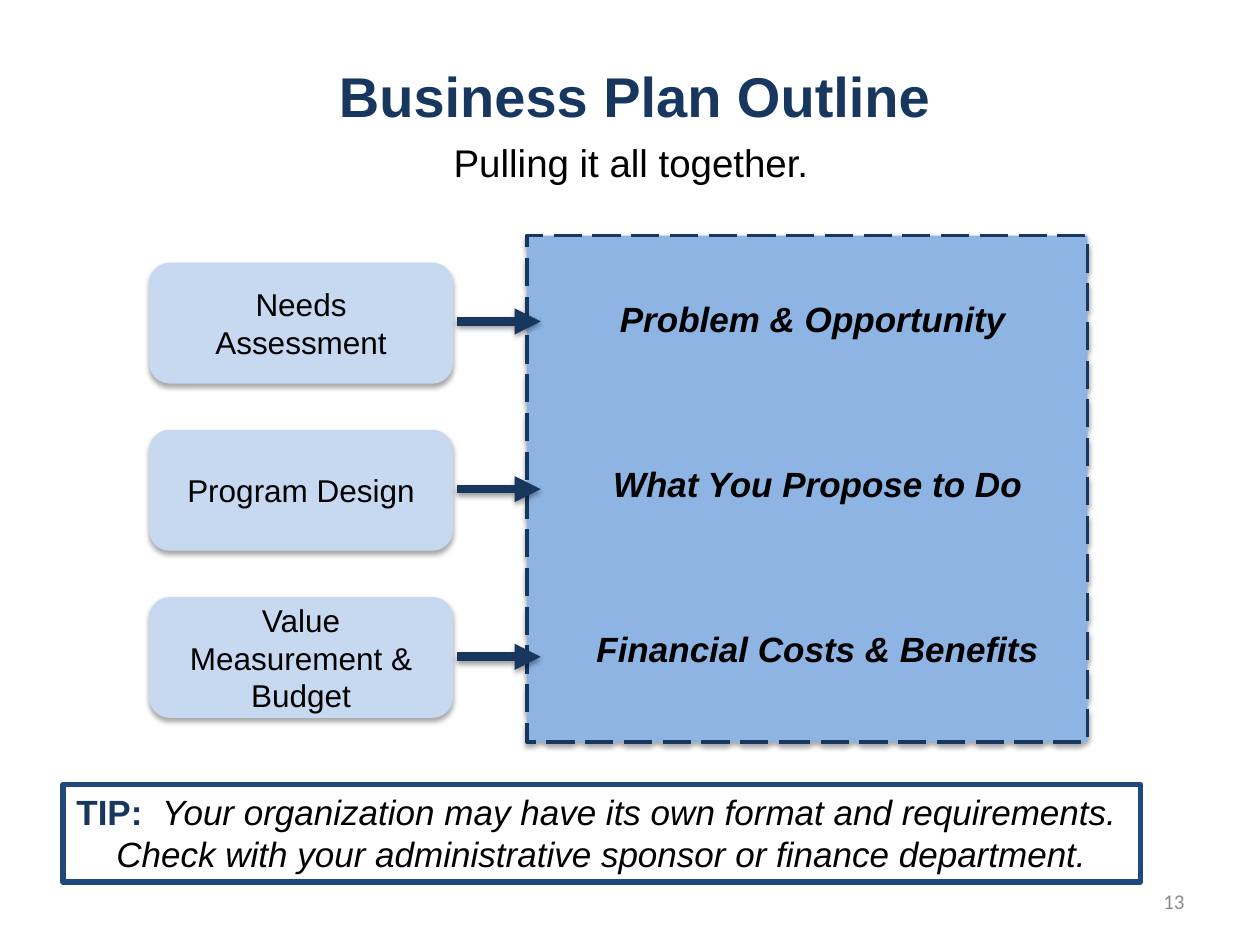
from dataclasses import dataclass

from lxml.etree import SubElement
from pptx import Presentation
from pptx.dml.color import RGBColor
from pptx.enum.dml import MSO_LINE
from pptx.enum.shapes import MSO_CONNECTOR, MSO_SHAPE
from pptx.enum.text import MSO_ANCHOR, PP_ALIGN
from pptx.oxml.ns import qn
from pptx.util import Cm, Pt


@dataclass(frozen=True)
class Theme:
    navy: str = "17375E"
    border: str = "1F497D"
    panel: str = "8EB4E3"
    box: str = "C6D9F1"
    text: str = "000000"
    muted: str = "8C8C8C"
    font: str = "Arial"
    number_font: str = "Calibri"
    title_size: int = 32
    subtitle_size: int = 22
    label_size: int = 20
    box_size: int = 18
    number_size: int = 12


class SlideBuilder:
    def __init__(self, slide, theme):
        self.slide = slide
        self.theme = theme

    def format_run(self, run, size, color=None, bold=False, italic=False, font=None):
        run.font.name = font or self.theme.font
        run.font.size = Pt(size)
        run.font.bold = bold
        run.font.italic = italic
        run.font.color.rgb = RGBColor.from_string(color or self.theme.text)

    def set_text(self, shape, text, size, align=PP_ALIGN.CENTER, anchor=MSO_ANCHOR.TOP, **style):
        frame = shape.text_frame
        frame.text = text
        frame.word_wrap = True
        frame.vertical_anchor = anchor
        paragraph = frame.paragraphs[0]
        paragraph.alignment = align
        self.format_run(paragraph.runs[0], size, **style)

    def set_line(self, shape, color, width):
        shape.line.color.rgb = RGBColor.from_string(color)
        shape.line.width = Pt(width)

    def add_shadow(self, shape, opacity, distance):
        properties = shape._element.spPr
        effects = properties.find(qn("a:effectLst"))
        if effects is None:
            effects = SubElement(properties, qn("a:effectLst"))
        shadow = SubElement(effects, qn("a:outerShdw"), blurRad=str(Pt(3.1)),
                            dist=str(Pt(distance)), dir="5400000", rotWithShape="0")
        color = SubElement(shadow, qn("a:srgbClr"), val="000000")
        SubElement(color, qn("a:alpha"), val=str(opacity * 1000))

    def title(self, text, left, top, width, height):
        shape = self.slide.shapes.title
        shape.left, shape.top, shape.width, shape.height = map(Cm, (left, top, width, height))
        self.set_text(shape, text, self.theme.title_size, anchor=MSO_ANCHOR.MIDDLE,
                      color=self.theme.navy, bold=True)

    def text_box(self, text, left, top, width, height, size, **style):
        shape = self.slide.shapes.add_textbox(Cm(left), Cm(top), Cm(width), Cm(height))
        self.set_text(shape, text, size, **style)
        return shape

    def block(self, kind, left, top, width, height, fill, line, line_width):
        shape = self.slide.shapes.add_shape(kind, Cm(left), Cm(top), Cm(width), Cm(height))
        shape.fill.solid()
        shape.fill.fore_color.rgb = RGBColor.from_string(fill)
        self.set_line(shape, line, line_width)
        shape.shadow.inherit = False
        self.add_shadow(shape, 35, 1.8)
        return shape

    def panel(self, left, top, width, height):
        shape = self.block(MSO_SHAPE.RECTANGLE, left, top, width, height,
                           self.theme.panel, self.theme.navy, 2)
        shape.line.dash_style = MSO_LINE.LONG_DASH

    def step_box(self, text, left, top, width, height):
        shape = self.block(MSO_SHAPE.ROUNDED_RECTANGLE, left, top, width, height,
                           self.theme.box, self.theme.box, 0.75)
        self.set_text(shape, text, self.theme.box_size, anchor=MSO_ANCHOR.MIDDLE)

    def arrow(self, start, end, y):
        connector = self.slide.shapes.add_connector(
            MSO_CONNECTOR.STRAIGHT, Cm(start), Cm(y), Cm(end), Cm(y))
        self.set_line(connector, self.theme.navy, 5)
        line = connector._element.spPr.find(qn("a:ln"))
        SubElement(line, qn("a:tailEnd"), type="triangle")
        self.add_shadow(connector, 38, 1.6)

    def tip(self, heading, text, left, top, width, height):
        size = self.theme.label_size
        shape = self.text_box(heading, left, top, width, height, size,
                              color=self.theme.navy, bold=True)
        self.set_line(shape, self.theme.border, 3)
        run = shape.text_frame.paragraphs[0].add_run()
        run.text = text
        self.format_run(run, size, italic=True)


def main():
    theme = Theme()
    presentation = Presentation()
    presentation.slide_width, presentation.slide_height = Cm(25.4), Cm(19.05)
    slide = presentation.slides.add_slide(presentation.slide_layouts[5])
    builder = SlideBuilder(slide, theme)

    # Heading
    builder.title("Business Plan Outline", 1.47, 0.64, 22.66, 2.54)
    builder.text_box("Pulling it all together.", 0.97, 2.67, 23.5, 1.19, theme.subtitle_size)

    # Inputs on the left feed the plan sections on the right
    builder.panel(10.62, 4.75, 11.3, 10.21)
    rows = [
        ("Needs Assessment", "Problem & Opportunity"),
        ("Program Design", " What You Propose to Do"),
        ("Value Measurement & Budget", " Financial Costs & Benefits"),
    ]
    for index, (step, section) in enumerate(rows):
        builder.step_box(step, 3.02, 5.31 + index * 3.37, 6.1, 2.41)
        builder.arrow(9.22, 10.9, 6.48 + index * 3.38)
        builder.text_box(section, 11.23, 5.87 + index * 3.33, 10.31, 1.12,
                         theme.label_size, bold=True, italic=True)

    # Tip and page number
    builder.tip("TIP:  ",
                "Your organization may have its own format and requirements.  "
                "Check with your administrative sponsor or finance department.",
                1.27, 15.82, 21.72, 1.96)
    builder.text_box("13", 18.21, 17.65, 5.92, 1.02, theme.number_size,
                     align=PP_ALIGN.RIGHT, anchor=MSO_ANCHOR.MIDDLE,
                     color=theme.muted, font=theme.number_font)

    presentation.save("out.pptx")


if __name__ == "__main__":
    main()
